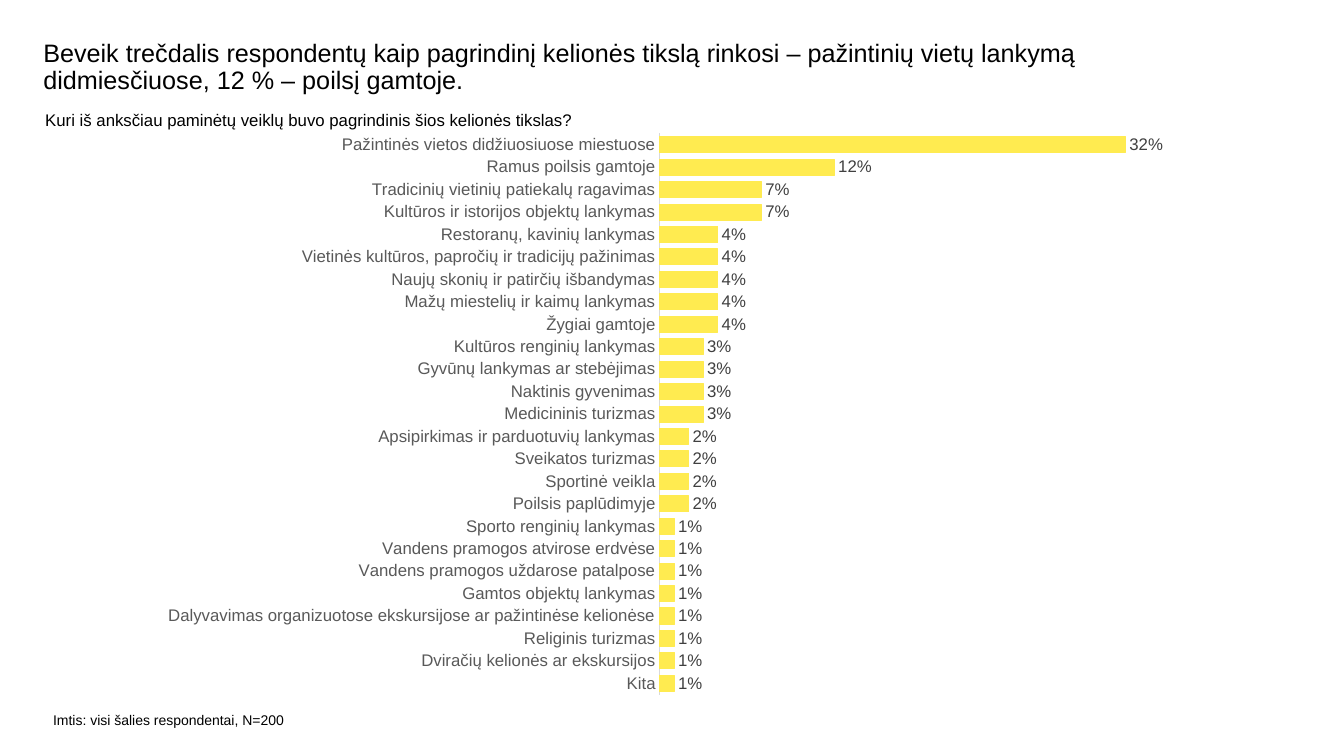
from dataclasses import dataclass

import pptx
import pptx.chart.data
import pptx.dml.color
import pptx.enum.chart
import pptx.enum.text
import pptx.util
from lxml import etree
from pptx.oxml.ns import qn

Cm = pptx.util.Cm
Pt = pptx.util.Pt


@dataclass
class Note:
    text: str
    left: float
    top: float
    width: float
    height: float
    size: int


NOTES = [
    Note("Imtis: visi šalies respondentai, N=200", 1.09, 17.81, 7.42, 0.69, 10),
    Note("Kuri iš anksčiau paminėtų veiklų buvo pagrindinis šios kelionės tikslas?",
         0.89, 2.64, 16.94, 0.76, 12),
]

TITLE = ("Beveik trečdalis respondentų kaip pagrindinį kelionės tikslą rinkosi – "
         "pažintinių vietų lankymą didmiesčiuose, 12 % – poilsį gamtoje.")

PURPOSES = [
    ("Kita", 0.01),
    ("Dviračių kelionės ar ekskursijos", 0.01),
    ("Religinis turizmas", 0.01),
    ("Dalyvavimas organizuotose ekskursijose ar pažintinėse kelionėse", 0.01),
    ("Gamtos objektų lankymas", 0.01),
    ("Vandens pramogos uždarose patalpose", 0.01),
    ("Vandens pramogos atvirose erdvėse", 0.01),
    ("Sporto renginių lankymas", 0.01),
    ("Poilsis paplūdimyje", 0.02),
    ("Sportinė veikla", 0.02),
    ("Sveikatos turizmas", 0.02),
    ("Apsipirkimas ir parduotuvių lankymas", 0.02),
    ("Medicininis turizmas", 0.03),
    ("Naktinis gyvenimas", 0.03),
    ("Gyvūnų lankymas ar stebėjimas", 0.03),
    ("Kultūros renginių lankymas", 0.03),
    ("Žygiai gamtoje", 0.04),
    ("Mažų miestelių ir kaimų lankymas", 0.04),
    ("Naujų skonių ir patirčių išbandymas", 0.04),
    ("Vietinės kultūros, papročių ir tradicijų pažinimas", 0.04),
    ("Restoranų, kavinių lankymas", 0.04),
    ("Kultūros ir istorijos objektų lankymas", 0.07),
    ("Tradicinių vietinių patiekalų ragavimas", 0.07),
    ("Ramus poilsis gamtoje", 0.12),
    ("Pažintinės vietos didžiuosiuose miestuose", 0.32),
]


def rgb(value: str) -> pptx.dml.color.RGBColor:
    return pptx.dml.color.RGBColor.from_string(value)


def style_font(font, size: int, color: str) -> None:
    font.name = "Arial"
    font.size = Pt(size)
    font.color.rgb = rgb(color)


def style_line(line, color: str) -> None:
    line.color.rgb = rgb(color)
    line.width = Pt(0.75)


def add_title(slide) -> None:
    sp = slide.shapes.title
    sp.left, sp.top, sp.width, sp.height = Cm(1.09), Cm(1.02), Cm(27.51), Cm(1.02)
    tf = sp.text_frame
    tf.text = TITLE
    tf.word_wrap = True
    tf.auto_size = pptx.enum.text.MSO_AUTO_SIZE.NONE
    tf.vertical_anchor = pptx.enum.text.MSO_ANCHOR.TOP
    tf.margin_left = tf.margin_top = tf.margin_right = tf.margin_bottom = 0
    p = tf.paragraphs[0]
    p.alignment = pptx.enum.text.PP_ALIGN.LEFT
    p.line_spacing = 0.9
    p.space_before = Pt(0)
    style_font(p.runs[0].font, 18, "000000")


def add_note(slide, note: Note) -> None:
    sp = slide.shapes.add_textbox(Cm(note.left), Cm(note.top), Cm(note.width), Cm(note.height))
    tf = sp.text_frame
    tf.text = note.text
    tf.word_wrap = True
    tf.auto_size = pptx.enum.text.MSO_AUTO_SIZE.SHAPE_TO_FIT_TEXT
    style_font(tf.paragraphs[0].runs[0].font, note.size, "000000")


def set_plot_layout(chart, x: float, y: float, w: float, h: float) -> None:
    area = chart._chartSpace.chart.plotArea
    for old in area.findall(qn("c:layout")):
        area.remove(old)
    layout = etree.Element(qn("c:layout"))
    manual = etree.SubElement(layout, qn("c:manualLayout"))
    settings = [("layoutTarget", "inner"), ("xMode", "edge"), ("yMode", "edge"),
                ("x", x), ("y", y), ("w", w), ("h", h)]
    for tag, value in settings:
        etree.SubElement(manual, qn(f"c:{tag}")).set("val", str(value))
    area.insert(0, layout)


def add_purpose_chart(slide) -> None:
    data = pptx.chart.data.CategoryChartData(number_format="0%")
    data.categories = [name for name, _ in PURPOSES]
    data.add_series("Series 1", [share for _, share in PURPOSES])
    chart = slide.shapes.add_chart(
        pptx.enum.chart.XL_CHART_TYPE.BAR_CLUSTERED,
        Cm(3.78), Cm(3.07), Cm(26.21), Cm(14.73), data).chart
    chart.has_title = False
    chart.has_legend = False
    style_font(chart.font, 10, "000000")
    set_plot_layout(chart, 0.49, 0.02, 0.49, 0.96)

    axis = chart.category_axis
    axis.major_tick_mark = axis.minor_tick_mark = pptx.enum.chart.XL_TICK_MARK.NONE
    axis.has_major_gridlines = False
    style_font(axis.tick_labels.font, 12, "595959")
    style_line(axis.format.line, "D9D9D9")

    axis = chart.value_axis
    axis.minimum_scale, axis.maximum_scale = 0, 0.35
    axis.has_major_gridlines = False
    axis.visible = False

    plot = chart.plots[0]
    plot.gap_width = 40
    plot.vary_by_categories = False
    series = plot.series[0]
    series.format.fill.solid()
    series.format.fill.fore_color.rgb = rgb("FFEB50")
    style_line(series.format.line, "FFEB50")
    labels = series.data_labels
    labels.show_value = True
    labels.position = pptx.enum.chart.XL_LABEL_POSITION.OUTSIDE_END
    labels.number_format = "0%"
    labels.number_format_is_linked = False
    style_font(labels.font, 12, "404040")


def main() -> None:
    prs = pptx.Presentation()
    prs.slide_width, prs.slide_height = Cm(33.87), Cm(19.05)
    slide = prs.slides.add_slide(prs.slide_layouts[5])
    add_title(slide)
    for note in NOTES:
        add_note(slide, note)
    add_purpose_chart(slide)
    prs.save("out.pptx")


if __name__ == "__main__":
    main()
